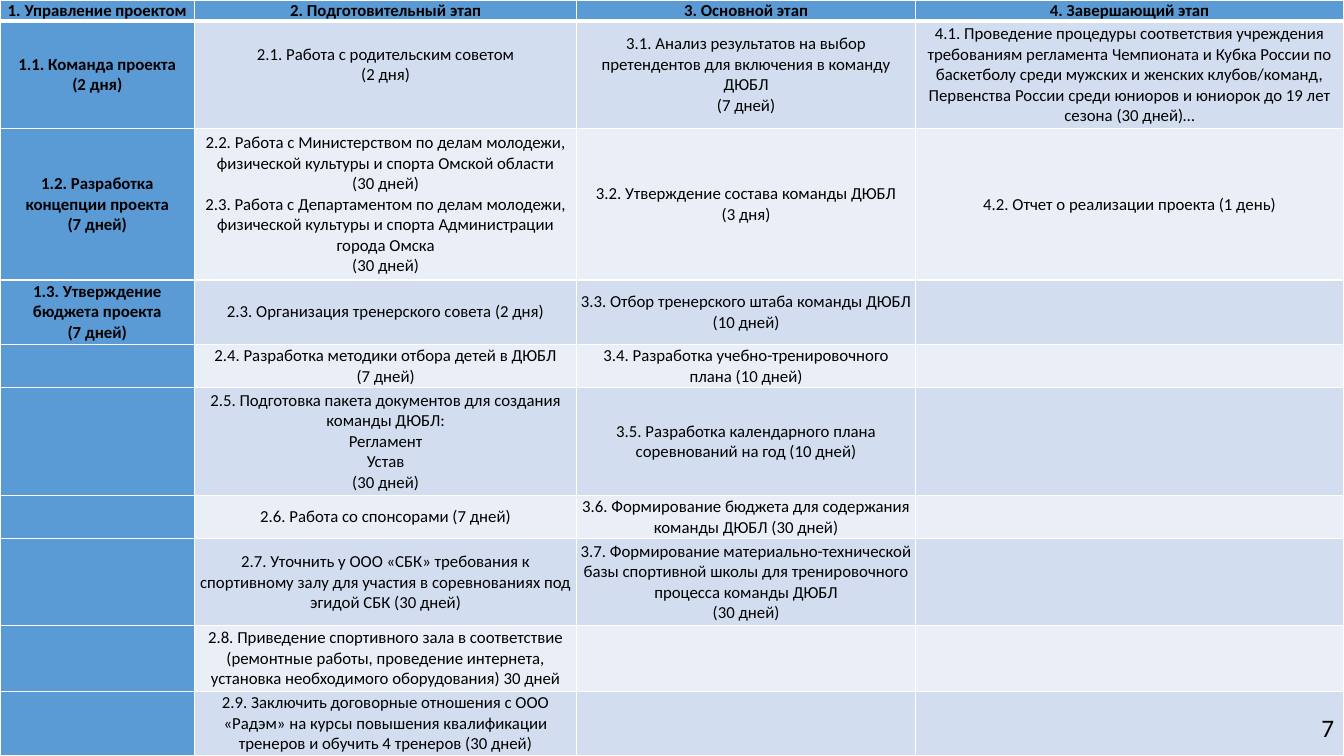
from dataclasses import dataclass

from lxml.etree import SubElement
from pptx import Presentation
from pptx.dml.color import RGBColor
from pptx.enum.text import MSO_ANCHOR, PP_ALIGN
from pptx.oxml.ns import qn
from pptx.slide import Slide
from pptx.table import _Cell
from pptx.text.text import TextFrame
from pptx.util import Pt


@dataclass(frozen=True)
class Theme:
    font: str = "Calibri"
    table_size: int = 12
    number_size: int = 18
    text: str = "000000"
    accent: str = "5B9BD5"
    bands: tuple[str, str] = ("D2DEEF", "EAEFF7")
    border: str = "FFFFFF"
    border_width: int = 1
    header_border_width: int = 3


@dataclass(frozen=True)
class Stage:
    """A column: "\n" starts a paragraph, "\v" breaks a line."""
    title: str
    width: int
    tasks: tuple[str, ...]


THEME = Theme()
SLIDE_WIDTH, SLIDE_HEIGHT = 960, 540
ROW_HEIGHTS = (15, 77, 108, 46, 31, 77, 31, 62, 47, 46)
CELL_SIDE_MARGIN = 2.7
PARENTS_TASK = "2.1. Работа с родительским советом\v(2 дня)"
PARENTS_TASK_BOTTOM_MARGIN = 14.6

STAGES = (
    Stage("1. Управление проектом", 139, (
        "1.1. Команда проекта\v(2 дня)",
        "1.2. Разработка концепции проекта\v(7 дней)",
        "1.3. Утверждение бюджета проекта\v(7 дней)",
    )),
    Stage("2. Подготовительный этап", 273, (
        PARENTS_TASK,
        "2.2. Работа с Министерством по делам молодежи, физической культуры "
        "и спорта Омской области\v(30 дней)\n"
        "2.3. Работа с Департаментом по делам молодежи, физической культуры "
        "и спорта Администрации города Омска\v(30 дней)",
        "2.3. Организация тренерского совета (2 дня)",
        "2.4. Разработка методики отбора детей в ДЮБЛ\v(7 дней)",
        "2.5. Подготовка пакета документов для создания команды ДЮБЛ:\n"
        "Регламент\nУстав\n(30 дней)",
        "2.6. Работа со спонсорами (7 дней)",
        "2.7. Уточнить у ООО «СБК» требования к спортивному залу для участия "
        "в соревнованиях под эгидой СБК (30 дней)",
        "2.8. Приведение спортивного зала в соответствие (ремонтные работы, "
        "проведение интернета, установка необходимого оборудования) 30 дней",
        "2.9. Заключить договорные отношения с ООО «Радэм» на курсы повышения "
        "квалификации тренеров и обучить 4 тренеров (30 дней)",
    )),
    Stage("3. Основной этап", 242, (
        "3.1. Анализ результатов на выбор претендентов для включения "
        "в команду ДЮБЛ\v(7 дней)",
        "3.2. Утверждение состава команды ДЮБЛ\v(3 дня)",
        "3.3. Отбор тренерского штаба команды ДЮБЛ (10 дней)",
        "3.4. Разработка учебно-тренировочного плана (10 дней)",
        "3.5. Разработка календарного плана соревнований на год (10 дней)",
        "3.6. Формирование бюджета для содержания команды ДЮБЛ (30 дней)",
        "3.7. Формирование материально-технической базы спортивной школы "
        "для тренировочного процесса команды ДЮБЛ\v(30 дней)",
    )),
    Stage("4. Завершающий этап", 306, (
        "4.1. Проведение процедуры соответствия учреждения требованиям "
        "регламента Чемпионата и Кубка России по баскетболу среди мужских "
        "и женских клубов/команд, Первенства России среди юниоров и юниорок "
        "до 19 лет сезона (30 дней)…",
        "4.2. Отчет о реализации проекта (1 день)",
    )),
)


def write_text(text_frame: TextFrame, text: str, *, size: int,
               bold: bool = False, alignment: PP_ALIGN = PP_ALIGN.CENTER) -> None:
    text_frame.text = text
    for paragraph in text_frame.paragraphs:
        paragraph.alignment = alignment
        for run in paragraph.runs:
            run.font.name = THEME.font
            run.font.size = Pt(size)
            run.font.bold = bold
            run.font.color.rgb = RGBColor.from_string(THEME.text)
        for line_break in paragraph._p.findall(qn("a:br")):
            SubElement(line_break, qn("a:rPr"), sz=str(size * 100))


def set_borders(cell: _Cell, row: int) -> None:
    """Draw the cell's edges, with a heavier line under the header row."""
    properties = cell._tc.get_or_add_tcPr()
    heavy_edge = {0: "lnB", 1: "lnT"}.get(row)
    for edge in ("lnL", "lnR", "lnT", "lnB"):
        width = THEME.header_border_width if edge == heavy_edge else THEME.border_width
        line = SubElement(properties, qn(f"a:{edge}"), w=str(Pt(width)))
        fill = SubElement(line, qn("a:solidFill"))
        SubElement(fill, qn("a:srgbClr"), val=THEME.border)


def format_cell(cell: _Cell, text: str, row: int, column: int) -> None:
    is_heading = row == 0 or column == 0
    set_borders(cell, row)
    cell.fill.solid()
    color = THEME.accent if is_heading else THEME.bands[(row - 1) % 2]
    cell.fill.fore_color.rgb = RGBColor.from_string(color)
    cell.vertical_anchor = MSO_ANCHOR.MIDDLE
    cell.margin_left = cell.margin_right = Pt(CELL_SIDE_MARGIN)
    cell.margin_top = Pt(0)
    cell.margin_bottom = Pt(PARENTS_TASK_BOTTOM_MARGIN if text == PARENTS_TASK else 0)
    if text:
        write_text(cell.text_frame, text, size=THEME.table_size, bold=is_heading)


def add_stage_table(slide: Slide) -> None:
    table = slide.shapes.add_table(
        len(ROW_HEIGHTS), len(STAGES), Pt(0), Pt(0), Pt(SLIDE_WIDTH), Pt(SLIDE_HEIGHT)
    ).table
    table.first_col = True
    for row, height in enumerate(ROW_HEIGHTS):
        table.rows[row].height = Pt(height)
    for column, stage in enumerate(STAGES):
        table.columns[column].width = Pt(stage.width)
        texts = (stage.title, *stage.tasks)
        for row in range(len(ROW_HEIGHTS)):
            text = texts[row] if row < len(texts) else ""
            format_cell(table.cell(row, column), text, row, column)


def add_slide_number(slide: Slide, number: str) -> None:
    text_box = slide.shapes.add_textbox(Pt(744), Pt(505.5), Pt(216), Pt(28.75))
    text_frame = text_box.text_frame
    text_frame.word_wrap = True
    text_frame.vertical_anchor = MSO_ANCHOR.MIDDLE
    write_text(text_frame, number, size=THEME.number_size, alignment=PP_ALIGN.RIGHT)


def main() -> None:
    presentation = Presentation()
    presentation.slide_width = Pt(SLIDE_WIDTH)
    presentation.slide_height = Pt(SLIDE_HEIGHT)
    blank_layout = presentation.slide_layouts.get_by_name("Blank")
    slide = presentation.slides.add_slide(blank_layout)
    add_stage_table(slide)
    add_slide_number(slide, "7")
    presentation.save("out.pptx")


if __name__ == "__main__":
    main()
